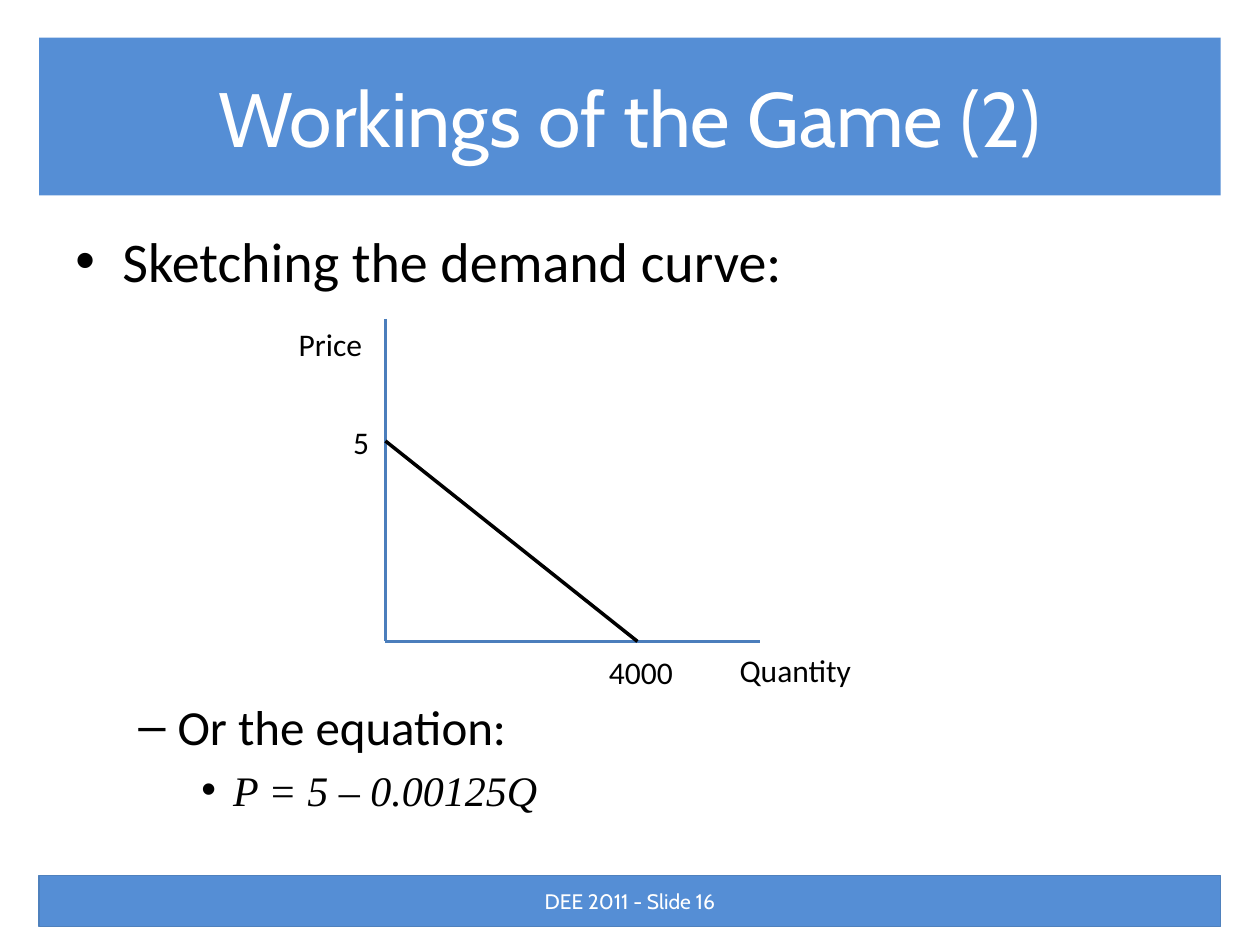
from lxml.etree import SubElement
from pptx import Presentation
from pptx.dml.color import RGBColor
from pptx.enum.shapes import MSO_CONNECTOR, MSO_SHAPE
from pptx.enum.text import MSO_ANCHOR, PP_ALIGN
from pptx.oxml.ns import qn
from pptx.util import Cm, Pt

BLUE, AXIS, BLACK, WHITE = "558ED5", "4B7EBC", "000000", "FFFFFF"


def rgb(value):
    """Turn a hex string into a colour."""
    return RGBColor.from_string(value)


def add_run(p, text, size, color=BLACK, font="Calibri", italic=False):
    """Append a formatted run to a paragraph."""
    r = p.add_run()
    r.text = text
    r.font.name, r.font.size = font, Pt(size)
    r.font.color.rgb = rgb(color)
    r.font.italic = italic


def add_bar(s, top, height, text, size, line=None):
    """Add a full-width blue bar with centred text."""
    sp = s.shapes.add_shape(MSO_SHAPE.RECTANGLE, Cm(0.79), Cm(top), Cm(23.82), Cm(height))
    sp.shadow.inherit = False
    sp.fill.solid()
    sp.fill.fore_color.rgb = rgb(BLUE)
    if line:
        sp.line.color.rgb = rgb(line)
        sp.line.width = Pt(0.75)
    else:
        sp.line.fill.background()
    tf = sp.text_frame
    tf.vertical_anchor = MSO_ANCHOR.MIDDLE
    p = tf.paragraphs[0]
    p.alignment = PP_ALIGN.CENTER
    add_run(p, text, size, WHITE, "Cabin")


def add_text_box(s, left, top, width, height):
    """Add a wrapping text box and return its text frame."""
    tf = s.shapes.add_textbox(Cm(left), Cm(top), Cm(width), Cm(height)).text_frame
    tf.word_wrap = True
    return tf


def add_label(s, left, top, width, text, align=PP_ALIGN.LEFT):
    """Add a label to the diagram."""
    p = add_text_box(s, left, top, width, 1.02).paragraphs[0]
    p.alignment = align
    add_run(p, text, 18)


def set_bullet(p, char, level, indent, hanging, before):
    """Give a paragraph its bullet, level, indents and space before."""
    p.level = level
    p.space_before = Pt(before)
    pPr = p._p.get_or_add_pPr()
    pPr.set("marL", str(Cm(indent)))
    pPr.set("indent", str(-Cm(hanging)))
    SubElement(pPr, qn("a:buFont"), typeface="Arial")
    SubElement(pPr, qn("a:buChar"), char=char)


def add_body(s):
    """Add the bullets, leaving room for the diagram after the first."""
    tf = add_text_box(s, 1.27, 4.45, 22.86, 12.57)
    items = [
        ("Sketching the demand curve:", 32, "•", 0.95, 0.95, 0, "Calibri"),
        ("Or the equation:", 28, "–", 2.06, 0.79, 230, "Calibri"),
        ("P = 5 – 0.00125Q", 24, "•", 3.18, 0.64, 5, "Times New Roman"),
    ]
    for level, (text, size, char, indent, hanging, before, font) in enumerate(items):
        p = tf.paragraphs[0] if level == 0 else tf.add_paragraph()
        set_bullet(p, char, level, indent, hanging, before)
        add_run(p, text, size, font=font, italic=level == 2)


def add_line(s, start, end, color):
    """Add a straight line between two points."""
    cx = s.shapes.add_connector(MSO_CONNECTOR.STRAIGHT, *map(Cm, start + end))
    cx.line.color.rgb = rgb(color)
    cx.line.width = Pt(2)
    SubElement(cx._element.spPr, qn("a:effectLst"))


def add_diagram(s):
    """Draw the axes, the demand curve and their labels."""
    x, y = 7.77, 12.93
    price_y, quantity_x = 8.89, 12.85
    add_line(s, (x, 6.43), (x, y), AXIS)
    add_line(s, (15.32, y), (x, y), AXIS)
    add_line(s, (x, price_y), (quantity_x, y), BLACK)
    add_label(s, 5.77, 6.43, 1.9, "Price")
    add_label(s, 14.66, 13.0, 2.92, "Quantity")
    add_label(s, 5.89, 8.41, 1.8, "5", PP_ALIGN.RIGHT)
    add_label(s, 11.52, 13.03, 2.8, "4000", PP_ALIGN.CENTER)


def main():
    """Build and save the slide."""
    prs = Presentation()
    prs.slide_width, prs.slide_height = Cm(25.4), Cm(19.05)
    s = prs.slides.add_slide(prs.slide_layouts[6])
    add_bar(s, 0.76, 3.18, "Workings of the Game (2)", 44)
    add_body(s)
    add_bar(s, 17.65, 1.03, "DEE 2011 - Slide 16", 12, "4F81BD")
    add_diagram(s)
    prs.save("out.pptx")


if __name__ == "__main__":
    main()
